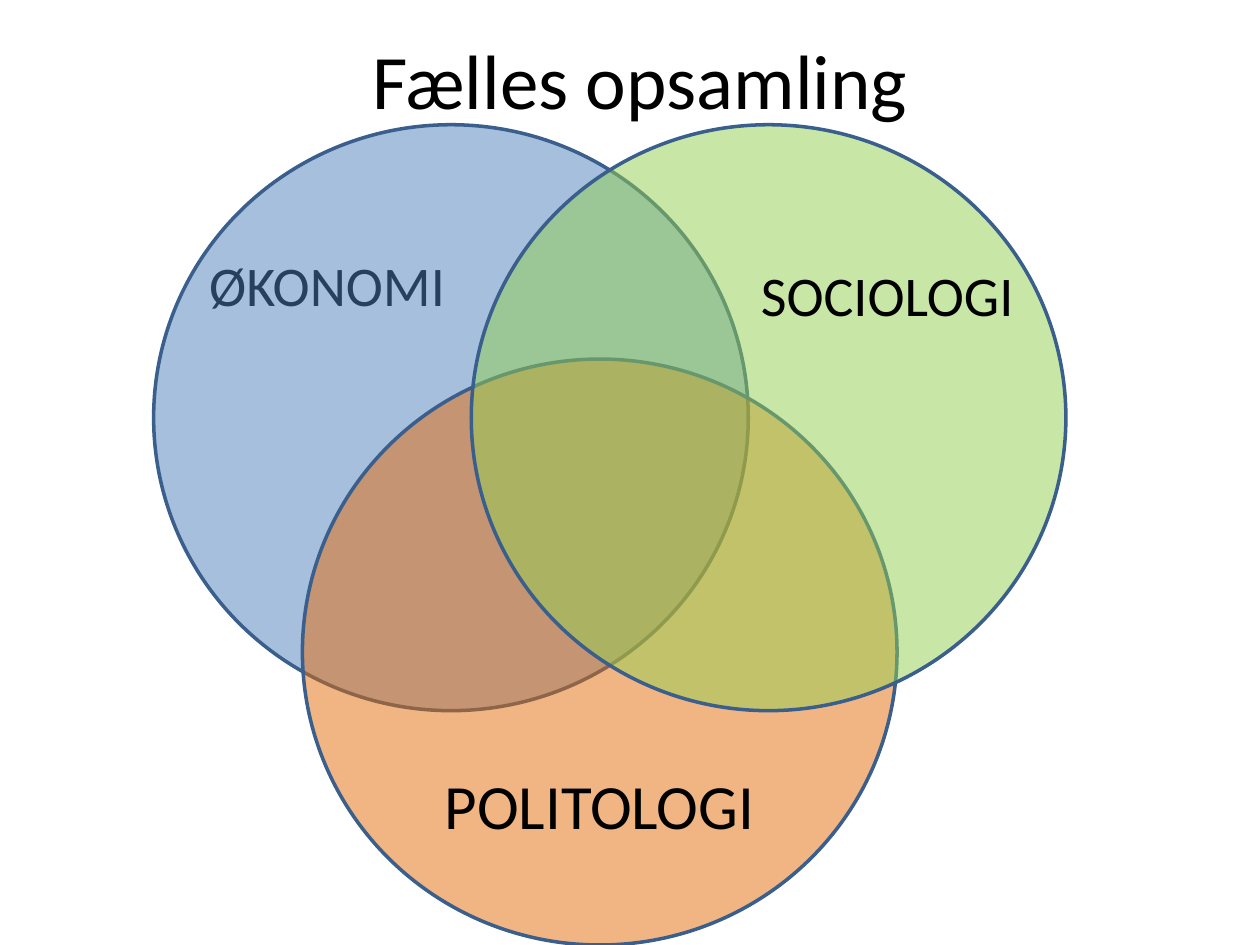
"""Build a slide with a three-circle Venn diagram of the social sciences."""
import pptx
import pptx.dml.color
import pptx.enum.shapes
import pptx.enum.text
import pptx.oxml
import pptx.oxml.ns
import pptx.util

Pt = pptx.util.Pt
ALIGN = pptx.enum.text.PP_ALIGN
ANCHOR = pptx.enum.text.MSO_ANCHOR

TITLE = ("Fælles opsamling", (41.7, 0, 648, 90), 44)
ECONOMICS = ("ØKONOMI", (112.3, 139.7, 158.4, 64.8), 32)
LABELS = [
    ("SOCIOLOGI", (427.7, 145.4, 169.9, 46.1), 32, True),
    ("POLITOLOGI", (247, 434.2, 193.7, 51.1), 36, False),
]
CIRCLES = [
    ("4F81BD", 87.8, 71.3),
    ("E46C0A", 172.8, 205.2),
    ("92D050", 269.3, 71.3),
]
CIRCLE_SIZE = (339.8, 334.8)
OUTLINE = "3A5F8C"


def colour(code):
    return pptx.dml.color.RGBColor.from_string(code)


def apply(target, values):
    for name, value in values.items():
        setattr(target, name, value)


def place(shape, box):
    apply(shape, dict(zip(("left", "top", "width", "height"), map(Pt, box))))


def write(shape, text, size, align=ALIGN.LEFT, anchor=ANCHOR.TOP, wrap=True):
    frame = shape.text_frame
    apply(frame, {"text": text, "word_wrap": wrap, "vertical_anchor": anchor})
    paragraph = frame.paragraphs[0]
    apply(paragraph, {"alignment": align, "space_before": Pt(0)})
    apply(paragraph.runs[0].font, {"name": "Calibri", "size": Pt(size)})
    paragraph.runs[0].font.color.rgb = colour("000000")
    return paragraph


def remove_bullet(paragraph):
    properties = paragraph._p.get_or_add_pPr()
    apply_indent = {"marL": "0", "indent": "0"}
    for name, value in apply_indent.items():
        properties.set(name, value)
    properties.append(pptx.oxml.parse_xml(f"<a:buNone {pptx.oxml.ns.nsdecls('a')}/>"))


def add_circle(slide, fill, left, top):
    circle = slide.shapes.add_shape(
        pptx.enum.shapes.MSO_SHAPE.OVAL, *map(Pt, (left, top, *CIRCLE_SIZE)))
    circle.shadow.inherit = False
    circle.fill.solid()
    circle.fill.fore_color.rgb = colour(fill)
    tint = circle._element.spPr.find(".//" + pptx.oxml.ns.qn("a:srgbClr"))
    tint.append(pptx.oxml.parse_xml(
        f"<a:alpha {pptx.oxml.ns.nsdecls('a')} val='50000'/>"))
    circle.line.color.rgb = colour(OUTLINE)
    circle.line.width = Pt(2)


def main():
    deck = pptx.Presentation()
    apply(deck, {"slide_width": Pt(720), "slide_height": Pt(540)})
    slide = deck.slides.add_slide(deck.slide_layouts[1])

    heading, box, size = TITLE
    place(slide.shapes.title, box)
    write(slide.shapes.title, heading, size, ALIGN.CENTER, ANCHOR.MIDDLE)

    subject, box, size = ECONOMICS
    economics = slide.placeholders[1]
    place(economics, box)
    remove_bullet(write(economics, subject, size))

    for circle in CIRCLES:
        add_circle(slide, *circle)
    for subject, box, size, wrap in LABELS:
        label = slide.shapes.add_textbox(*map(Pt, box))
        write(label, subject, size, wrap=wrap)

    deck.save("out.pptx")


if __name__ == "__main__":
    main()
